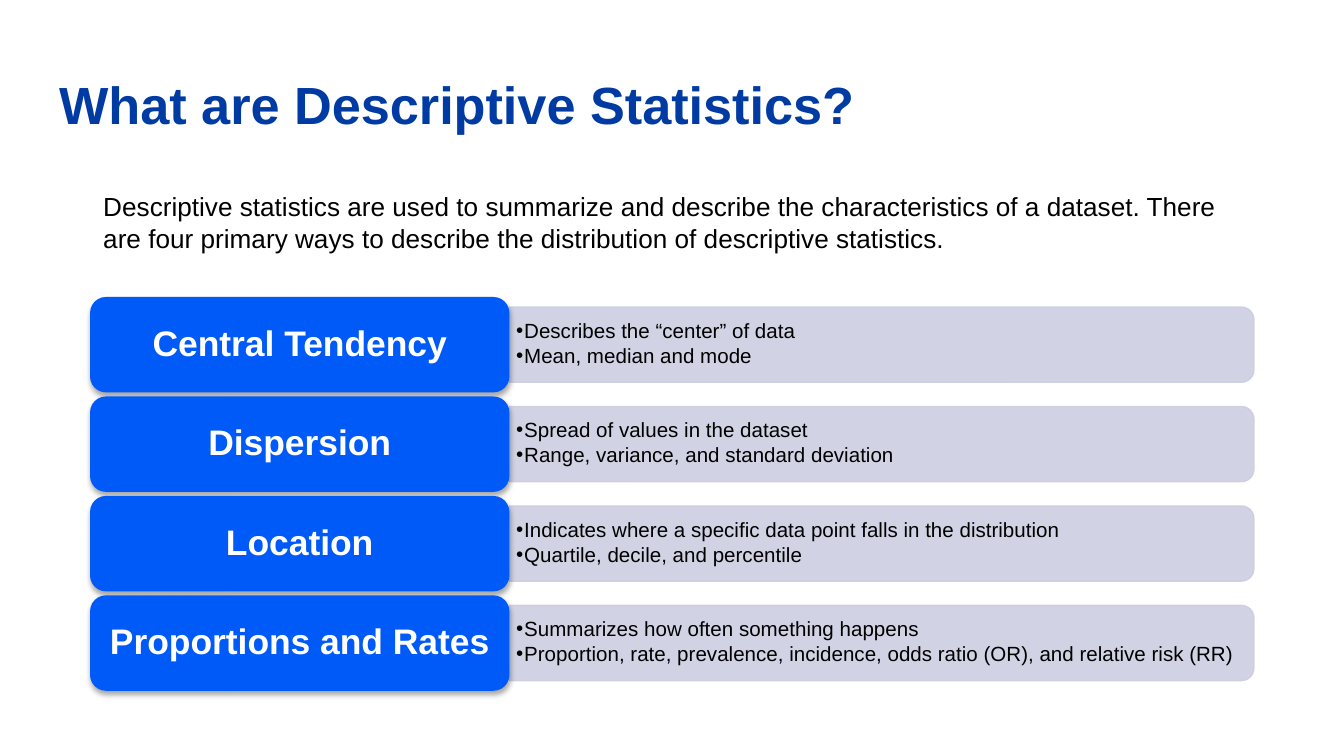
from lxml import etree
from pptx import Presentation
from pptx.dml.color import RGBColor
from pptx.enum import shapes, text
from pptx.oxml import ns
from pptx.util import Inches, Pt

BLUE, NAVY, LAVENDER, BLACK, WHITE = "005AF7", "003BA3", "CCCEE0", "000000", "FFFFFF"

MEASURES = [
    ("Central Tendency", ["Describes the “center” of data", "Mean, median and mode"]),
    ("Dispersion", ["Spread of values in the dataset",
                    "Range, variance, and standard deviation"]),
    ("Location", ["Indicates where a specific data point falls in the distribution",
                  "Quartile, decile, and percentile"]),
    ("Proportions and Rates",
     ["Summarizes how often something happens",
      "Proportion, rate, prevalence, incidence, odds ratio (OR), and relative risk (RR)"]),
]


def rgb(value):
    return RGBColor.from_string(value)


def add_xml(parent, tag, **attributes):
    child = etree.SubElement(parent, ns.qn(tag))
    for key, value in attributes.items():
        child.set(key, str(value))
    return child


def set_all(target, values):
    for key, value in values.items():
        setattr(target, key, value)


def set_frame(frame, side, end, anchor):
    set_all(frame, {
        "margin_left": Inches(side), "margin_right": Inches(side),
        "margin_top": Inches(end), "margin_bottom": Inches(end),
        "word_wrap": True, "auto_size": text.MSO_AUTO_SIZE.NONE,
        "vertical_anchor": anchor,
    })


def set_paragraph(paragraph, words, size, color, bold=False,
                  align=text.PP_ALIGN.LEFT, spacing=0.9):
    paragraph.text = words
    set_all(paragraph, {"alignment": align, "line_spacing": spacing})
    set_all(paragraph.runs[0].font, {"name": "Arial", "size": Pt(size), "bold": bold})
    paragraph.runs[0].font.color.rgb = rgb(color)


def add_bullet(paragraph, color):
    properties = paragraph._p.get_or_add_pPr()
    properties.set("marL", str(Inches(0.06)))
    properties.set("indent", str(-Inches(0.06)))
    add_xml(add_xml(properties, "a:buClr"), "a:srgbClr", val=color)
    add_xml(properties, "a:buFont", typeface="Arial")
    add_xml(properties, "a:buChar", char="•")


def add_title(slide, left, top, width, height):
    title = slide.shapes.title
    set_all(title, {"left": Inches(left), "top": Inches(top),
                    "width": Inches(width), "height": Inches(height)})
    set_frame(title.text_frame, 0.1, 0.1, text.MSO_ANCHOR.TOP)
    set_paragraph(title.text_frame.paragraphs[0], "What are Descriptive Statistics?",
                  28, NAVY, bold=True)


def add_intro(slide, left, top, width, height):
    intro = slide.shapes.add_textbox(Inches(left), Inches(top), Inches(width), Inches(height))
    set_frame(intro.text_frame, 0.1, 0.05, text.MSO_ANCHOR.TOP)
    set_paragraph(
        intro.text_frame.paragraphs[0],
        "Descriptive statistics are used to summarize and describe the characteristics of "
        "a dataset. There are four primary ways to describe the distribution of "
        "descriptive statistics.", 14, BLACK, spacing=1.0)


def add_details(slide, details, left, top, width, height):
    # Panel: turned a quarter so that its rounded end faces right
    panel = slide.shapes.add_shape(
        shapes.MSO_SHAPE.ROUND_2_SAME_RECTANGLE,
        Inches(left + (width - height) / 2), Inches(top - (width - height) / 2),
        Inches(height), Inches(width))
    panel.rotation = 90
    panel.shadow.inherit = False
    panel.fill.solid()
    panel.fill.fore_color.rgb = rgb(LAVENDER)
    panel.line.color.rgb = rgb(LAVENDER)
    panel.line.width = Pt(0.75)
    for color in panel._element.spPr.iter(ns.qn("a:srgbClr")):
        add_xml(color, "a:alpha", val=90000)

    # Bullets: upright text over the panel
    bullets = slide.shapes.add_textbox(Inches(left), Inches(top + 0.02),
                                       Inches(width - 0.03), Inches(height - 0.05))
    frame = bullets.text_frame
    set_frame(frame, 0.05, 0.02, text.MSO_ANCHOR.MIDDLE)
    for index, detail in enumerate(details):
        paragraph = frame.paragraphs[0] if index == 0 else frame.add_paragraph()
        set_paragraph(paragraph, detail, 11, BLACK)
        set_all(paragraph, {"level": 1, "space_after": Pt(1.65)})
        add_bullet(paragraph, BLACK)


def add_label(slide, words, left, top, width, height):
    label = slide.shapes.add_shape(shapes.MSO_SHAPE.ROUNDED_RECTANGLE, Inches(left),
                                   Inches(top), Inches(width), Inches(height))
    label.fill.solid()
    label.fill.fore_color.rgb = rgb(BLUE)
    label.line.fill.background()
    label.shadow.inherit = False
    effects = label._element.spPr.find(ns.qn("a:effectLst"))
    shadow = add_xml(effects, "a:outerShdw", blurRad=Pt(3.1), dist=Pt(1.8),
                     dir=90 * 60000, rotWithShape=0)
    add_xml(add_xml(shadow, "a:srgbClr", val=BLACK), "a:alpha", val=35000)
    set_frame(label.text_frame, 0.11, 0.07, text.MSO_ANCHOR.MIDDLE)
    set_paragraph(label.text_frame.paragraphs[0], words, 19, WHITE, bold=True,
                  align=text.PP_ALIGN.CENTER)


def add_measures(slide, left, top, width, label_width=3.12, label_height=0.71,
                 panel_height=0.56, pitch=0.74):
    for index, (name, details) in enumerate(MEASURES):
        row_top = top + index * pitch
        add_details(slide, details, left + label_width,
                    row_top + (label_height - panel_height) / 2,
                    width - label_width, panel_height)
        add_label(slide, name, left, row_top, label_width, label_height)


def main():
    deck = Presentation()
    deck.slide_width = Inches(10)
    deck.slide_height = deck.slide_width * 9 // 16
    slide = deck.slides.add_slide(deck.slide_layouts.get_by_name("Title Only"))
    add_title(slide, 0.34, 0.49, 9.32, 0.63)
    add_measures(slide, 0.67, 2.21, 8.66)
    add_intro(slide, 0.67, 1.37, 8.66, 0.57)
    deck.save("out.pptx")


if __name__ == "__main__":
    main()
